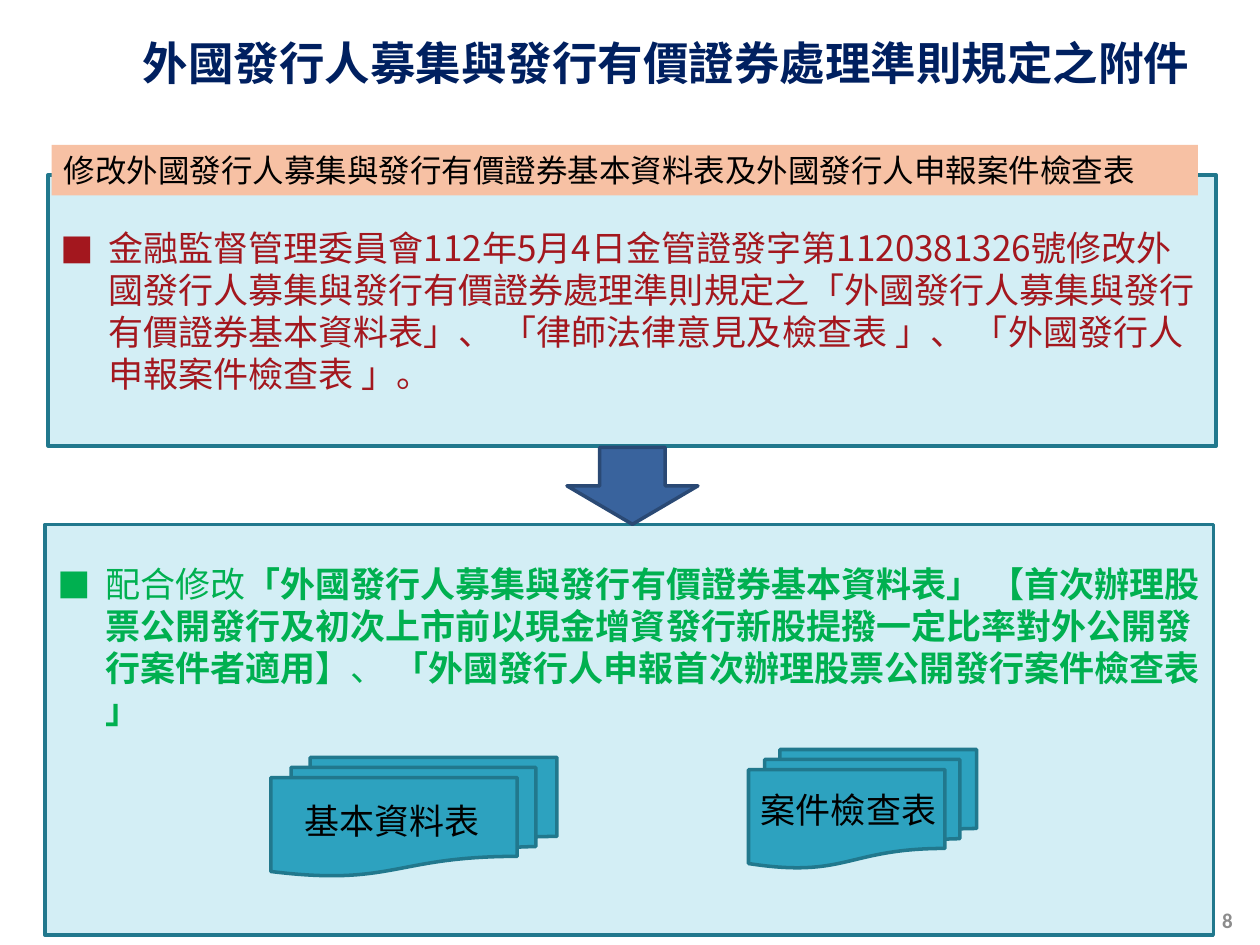
import lxml.etree
import pptx
import pptx.dml.color
import pptx.enum.shapes
import pptx.enum.text
import pptx.oxml.ns
import pptx.util

Cm = pptx.util.Cm
Pt = pptx.util.Pt
SHAPE = pptx.enum.shapes.MSO_SHAPE
ALIGN = pptx.enum.text.PP_ALIGN
ANCHOR = pptx.enum.text.MSO_ANCHOR


def color(value):
    return pptx.dml.color.RGBColor.from_string(value)


def add_element(parent, tag, **attributes):
    return lxml.etree.SubElement(parent, pptx.oxml.ns.qn(tag), **attributes)


class SlideBuilder:
    body_font = "Noto Sans CJK SC"
    heading_font = "Calibri"
    panel_fill = "D3EEF5"
    teal_line = "21788D"
    document_fill = "2DA2BF"
    bullet_indent = Cm(0.96)

    def __init__(self, slide):
        self.slide = slide

    def format_run(self, run, size, font_color, bold=False, font=body_font):
        run.font.size = Pt(size)
        run.font.bold = bold
        run.font.name = font
        run.font.color.rgb = color(font_color)
        add_element(run.font._element, "a:ea", typeface=self.body_font)

    def set_text(self, text_frame, text, size, font_color, align=ALIGN.LEFT,
                 anchor=ANCHOR.TOP, **style):
        text_frame.word_wrap = True
        text_frame.auto_size = pptx.enum.text.MSO_AUTO_SIZE.NONE
        text_frame.vertical_anchor = anchor
        text_frame.text = text
        paragraph = text_frame.paragraphs[0]
        paragraph.alignment = align
        paragraph.line_spacing = Pt(size * 1.2)
        self.format_run(paragraph.runs[0], size, font_color, **style)

    def title(self, box, text):
        title = self.slide.shapes.title
        title.left, title.top, title.width, title.height = map(Cm, box)
        self.set_text(title.text_frame, text, 26, "002060", ALIGN.CENTER,
                      bold=True, font=self.heading_font)

    def label(self, box, text, size=20, font_color="000000", **style):
        label = self.slide.shapes.add_textbox(*map(Cm, box))
        self.set_text(label.text_frame, text, size, font_color, **style)

    def shape(self, kind, box, fill, line=None):
        shape = self.slide.shapes.add_shape(kind, *map(Cm, box))
        shape.shadow.inherit = False
        shape.fill.solid()
        shape.fill.fore_color.rgb = color(fill)
        if line:
            shape.line.color.rgb = color(line)
            shape.line.width = Pt(2)
        else:
            shape.line.fill.background()
        return shape

    def banner(self, box, text):
        banner = self.shape(SHAPE.RECTANGLE, box, "F7C1A4")
        self.set_text(banner.text_frame, text, 18, "000000")

    def bullet_panel(self, box, parts, font_color, top_margin=None):
        panel = self.shape(SHAPE.RECTANGLE, box, self.panel_fill, self.teal_line)
        text_frame = panel.text_frame
        text_frame.word_wrap = True
        text_frame.vertical_anchor = ANCHOR.MIDDLE
        if top_margin:
            text_frame.vertical_anchor = ANCHOR.TOP
            text_frame.margin_top = Cm(top_margin)
        paragraph = text_frame.paragraphs[0]
        paragraph.alignment = ALIGN.LEFT
        paragraph.line_spacing = Pt(24)
        properties = paragraph._p.get_or_add_pPr()
        properties.set("marL", str(self.bullet_indent))
        properties.set("indent", str(-self.bullet_indent))
        add_element(properties, "a:buFont", typeface=self.heading_font)
        add_element(properties, "a:buChar", char="■")
        for text, bold in parts:
            run = paragraph.add_run()
            run.text = text
            self.format_run(run, 20, font_color, bold)

    def document_stack(self, box):
        self.shape(SHAPE.FLOWCHART_MULTIDOCUMENT, box,
                   self.document_fill, self.teal_line)


def main():
    presentation = pptx.Presentation()
    presentation.slide_width = Cm(25.4)
    presentation.slide_height = Cm(19.05)
    builder = SlideBuilder(
        presentation.slides.add_slide(presentation.slide_layouts[5]))

    builder.title((2.11, 0.58, 22.66, 2.01),
                  "外國發行人募集與發行有價證券處理準則規定之附件")
    builder.label((23.5, 18.03, 1.6, 1.02), "8", 12, "8C8C8C",
                  align=ALIGN.RIGHT, anchor=ANCHOR.MIDDLE, bold=True,
                  font=builder.heading_font)

    builder.bullet_panel((0.97, 3.53, 23.55, 5.46), [
        ("金融監督管理委員會112年5月4日金管證發字第1120381326號修改"
         "外國發行人募集與發行有價證券處理準則規定之"
         "「外國發行人募集與發行有價證券基本資料表」、 "
         "「律師法律意見及檢查表 」、 「外國發行人申報案件檢查表 」。", False),
    ], "A3171E")
    builder.banner((1.04, 2.92, 23.11, 1.02),
                   "修改外國發行人募集與發行有價證券基本資料表及"
                   "外國發行人申報案件檢查表")

    builder.bullet_panel((0.91, 10.57, 23.55, 8.28), [
        ("配合修改", False),
        ("「外國發行人募集與發行有價證券基本資料表」 "
         "【首次辦理股票公開發行及初次上市前以現金增資發行新股"
         "提撥一定比率對外公開發行案件者適用】", True),
        ("、 ", False),
        ("「外國發行人申報首次辦理股票公開發行案件檢查表 」", True),
    ], "00B050", top_margin=0.76)
    builder.shape(SHAPE.DOWN_ARROW, (11.43, 9.02, 2.64, 1.55),
                  "39639D", "2A4974")

    builder.document_stack((5.46, 15.27, 5.77, 2.39))
    builder.label((5.46, 16, 4.88, 1.12), "基本資料表", align=ALIGN.CENTER)
    builder.document_stack((15.09, 15.11, 4.6, 2.39))
    builder.label((15.09, 15.77, 4.22, 1.12), "案件檢查表")

    presentation.save("out.pptx")


if __name__ == "__main__":
    main()
